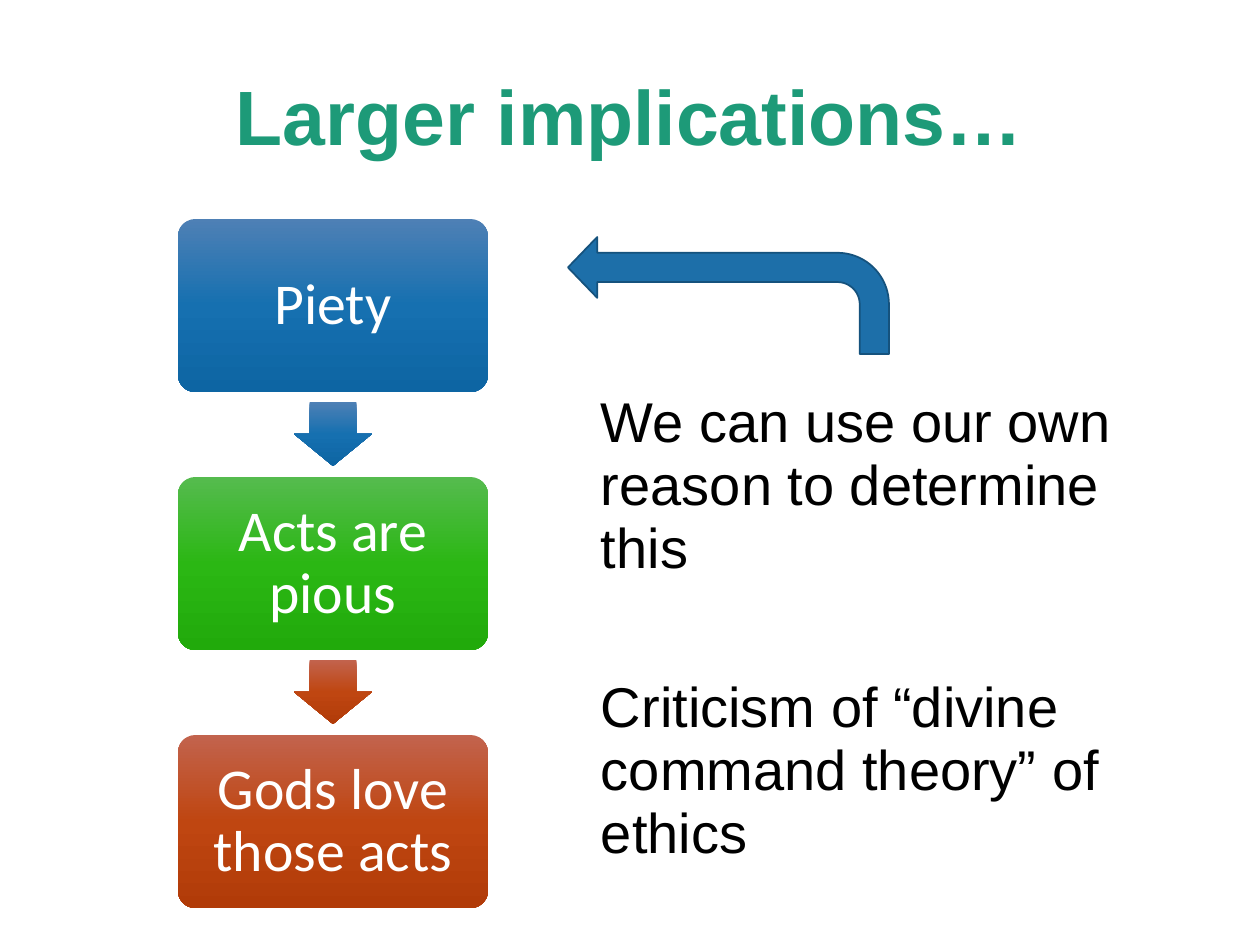
"""Build the slide on the larger implications of the piety argument."""
from dataclasses import dataclass

from lxml import etree
from pptx import Presentation, util as u
from pptx.dml.color import RGBColor
from pptx.enum import shapes, text
from pptx.oxml.ns import qn

PX = 914400 / 126
CARD_LEFT, CARD_TOP, CARD_WIDTH, CARD_HEIGHT = 178, 219, 310, 173
CARD_PITCH = 258
ARROW_WIDTH, ARROW_HEIGHT = 78, 64
BLUE = ("4E80B5", "1670B0", "0D65A3")
GREEN = ("55BB4E", "2BB714", "21AA0B")
RUST = ("C2634D", "BF4611", "B13B08")


@dataclass(frozen=True)
class Step:
    """One card of the flow and the gradient of the arrow below it."""
    label: str
    shades: tuple[str, ...]
    arrow_shades: tuple[str, ...] = ()


STEPS = (
    Step("Piety", BLUE, BLUE),
    Step("Acts are pious", GREEN, RUST),
    Step("Gods love those acts", RUST),
)


def px(length: int) -> u.Emu:
    """Turn pixels into EMU."""
    return u.Emu(round(length * PX))


def colour(value: str) -> RGBColor:
    """Turn a hex string into a colour."""
    return RGBColor.from_string(value)


def add_shape(page, kind, box: tuple[int, ...], adjustments: tuple[float, ...]):
    """Add a preset shape without a shadow."""
    shape = page.shapes.add_shape(kind, *map(px, box))
    shape.shadow.inherit = False
    for index, value in enumerate(adjustments):
        shape.adjustments[index] = value
    return shape


def shade(shape, shades: tuple[str, ...]) -> None:
    """Fill a shape with an even gradient from top to bottom, without a line."""
    shape.fill.gradient()
    shape.fill.gradient_angle = 270
    stops = shape._element.spPr.find(".//" + qn("a:gsLst"))
    for stop in list(stops):
        stops.remove(stop)
    for index, value in enumerate(shades):
        position = 100000 * index // (len(shades) - 1)
        stop = etree.SubElement(stops, qn("a:gs"), pos=str(position))
        etree.SubElement(stop, qn("a:srgbClr"), val=value)
    shape.line.fill.background()


def write(shape, *paragraphs: str, size: int, color: str, font: str = "Arial",
          bold: bool = False, align=text.PP_ALIGN.LEFT, anchor=text.MSO_ANCHOR.TOP,
          spacing: float = 0.9, gap: float = 0, inset: tuple[int, int] = (13, 6)) -> None:
    """Write formatted paragraphs into a shape."""
    frame = shape.text_frame
    frame.word_wrap = True
    frame.vertical_anchor = anchor
    frame.margin_left = frame.margin_right = px(inset[0])
    frame.margin_top = frame.margin_bottom = px(inset[1])
    for index, words in enumerate(paragraphs):
        para = frame.add_paragraph() if index else frame.paragraphs[0]
        para.alignment = align
        para.line_spacing = spacing
        para.space_before = u.Pt(gap if index else 0)
        span = para.add_run()
        span.text = words
        span.font.name = font
        span.font.size = u.Pt(size)
        span.font.bold = bold
        span.font.color.rgb = colour(color)


def add_text(page, box: tuple[int, ...], *paragraphs: str, **style) -> None:
    """Add a text box with formatted paragraphs."""
    write(page.shapes.add_textbox(*map(px, box)), *paragraphs, **style)


def draw_step(page, index: int, step: Step) -> None:
    """Draw one card and the arrow that leads to the next."""
    top = CARD_TOP + index * CARD_PITCH
    card = add_shape(page, shapes.MSO_SHAPE.ROUNDED_RECTANGLE,
                     (CARD_LEFT, top, CARD_WIDTH, CARD_HEIGHT), (0.1,))
    shade(card, step.shades)
    write(card, step.label, size=33, color="FFFFFF", font="Calibri",
          align=text.PP_ALIGN.CENTER, anchor=text.MSO_ANCHOR.MIDDLE, inset=(23, 23))
    if step.arrow_shades:
        left = CARD_LEFT + (CARD_WIDTH - ARROW_WIDTH) // 2
        arrow_top = top + (CARD_HEIGHT + CARD_PITCH - ARROW_HEIGHT) // 2
        arrow = add_shape(page, shapes.MSO_SHAPE.DOWN_ARROW,
                          (left, arrow_top, ARROW_WIDTH, ARROW_HEIGHT), (0.6, 0.5))
        shade(arrow, step.arrow_shades)


def draw_bent_arrow(page) -> None:
    """Draw the arrow that leads from the comment back to piety."""
    arrow = add_shape(page, shapes.MSO_SHAPE.BENT_ARROW,
                      (568, 237, 321, 117), (0.25, 0.26, 0.25, 0.44))
    arrow._element.spPr.find(qn("a:xfrm")).set("flipH", "1")
    arrow.fill.solid()
    arrow.fill.fore_color.rgb = colour("1D6FA9")
    arrow.line.color.rgb = colour("15527D")
    arrow.line.width = u.Pt(1)


def main() -> None:
    """Build and save the deck."""
    deck = Presentation()
    deck.slide_width, deck.slide_height = px(1260), px(945)
    page = deck.slides.add_slide(deck.slide_layouts[6])
    add_text(page, (87, 50, 1086, 142), "Larger implications…", size=44, color="1D9A78",
             bold=True, align=text.PP_ALIGN.CENTER, anchor=text.MSO_ANCHOR.MIDDLE)
    for index, step in enumerate(STEPS):
        draw_step(page, index, step)
    add_text(page, (588, 386, 586, 523),
             "We can use our own reason to determine this",
             "Criticism of “divine command theory” of ethics",
             size=32, color="000000", spacing=0.94, gap=54.5)
    draw_bent_arrow(page)
    deck.save("out.pptx")


if __name__ == "__main__":
    main()
